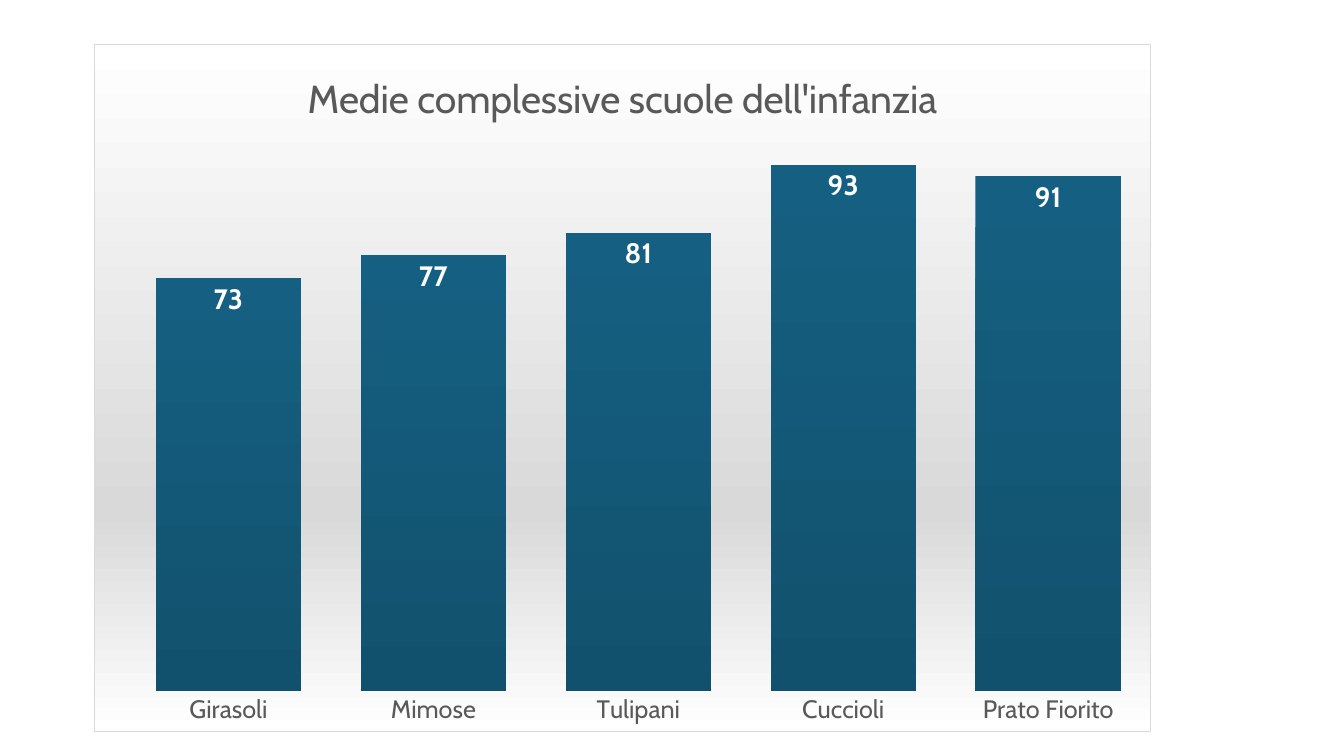
from lxml import etree
from pptx import Presentation
from pptx.chart.data import CategoryChartData
from pptx.dml.color import RGBColor
from pptx.enum.chart import XL_CHART_TYPE, XL_LABEL_POSITION, XL_TICK_MARK
from pptx.oxml import parse_xml
from pptx.oxml.ns import nsdecls, qn
from pptx.util import Pt

COLUMNS = XL_CHART_TYPE.COLUMN_CLUSTERED
INSIDE_END = XL_LABEL_POSITION.INSIDE_END
NO_TICKS = XL_TICK_MARK.NONE

FONT = "Cabin"
WHITE = RGBColor(0xFF, 0xFF, 0xFF)
SILVER = RGBColor(0xD9, 0xD9, 0xD9)
GREY = RGBColor(0x59, 0x59, 0x59)
BLUE = RGBColor(0x15, 0x60, 0x82)
DARK_BLUE = RGBColor(0x12, 0x51, 0x6D)

TITLE = "Medie complessive scuole dell'infanzia"
AVERAGES = {
    "Girasoli": 73,
    "Mimose": 77,
    "Tulipani": 81,
    "Cuccioli": 93,
    "Prato Fiorito": 91,
}
PLOT_LAYOUT = {"x": 0.03, "y": 0.117, "w": 0.97, "h": 0.824}


def set_font(font, size, color, bold=False):
    values = {"name": FONT, "size": Pt(size), "bold": bold}
    for name, value in values.items():
        setattr(font, name, value)
    font.color.rgb = color


def gradient_xml(stops):
    """Return a top-to-bottom gradient fill for (percent, colour) stops."""
    gs = "".join(
        f'<a:gs pos="{pos * 1000}"><a:srgbClr val="{color}"/></a:gs>'
        for pos, color in stops
    )
    return (f'<a:gradFill {nsdecls("a")}><a:gsLst>{gs}</a:gsLst>'
            '<a:lin ang="5400000" scaled="0"/></a:gradFill>')


def style_chart_area(chart):
    border = (f'<a:ln w="{Pt(0.75)}"><a:solidFill><a:srgbClr val="{SILVER}"/>'
              '</a:solidFill></a:ln>')
    fill = gradient_xml([(0, WHITE), (68, SILVER), (100, WHITE)])
    sp_pr = parse_xml(f'<c:spPr {nsdecls("c", "a")}>{fill}{border}</c:spPr>')
    chart.element.find(qn("c:chart")).addnext(sp_pr)


def place_plot(chart):
    plot_area = chart.element.find(".//" + qn("c:plotArea"))
    for old in plot_area.findall(qn("c:layout")):
        plot_area.remove(old)
    layout = etree.Element(qn("c:layout"))
    manual = etree.SubElement(layout, qn("c:manualLayout"))
    settings = {"layoutTarget": "inner", "xMode": "edge", "yMode": "edge"}
    for tag, value in {**settings, **PLOT_LAYOUT}.items():
        etree.SubElement(manual, qn(f"c:{tag}")).set("val", str(value))
    plot_area.insert(0, layout)


def style_title(chart):
    chart.has_title = True
    tf = chart.chart_title.text_frame
    tf.text = TITLE
    set_font(tf.paragraphs[0].runs[0].font, 28, GREY)


def style_axes(chart):
    axis = chart.category_axis
    axis.major_tick_mark = NO_TICKS
    axis.format.line.fill.background()
    set_font(axis.tick_labels.font, 18, GREY)

    values = {"minimum_scale": 0, "maximum_scale": 100,
              "has_major_gridlines": False, "visible": False}
    for name, value in values.items():
        setattr(chart.value_axis, name, value)


def style_columns(plot):
    plot.gap_width = 41
    plot.vary_by_categories = False
    series = plot.series[0]
    series.format.fill.background()
    sp_pr = series.format.fill._xPr
    fill = parse_xml(gradient_xml([(0, BLUE), (100, DARK_BLUE)]))
    sp_pr.replace(sp_pr.find(qn("a:noFill")), fill)

    labels = series.data_labels
    values = {"show_value": True, "position": INSIDE_END,
              "number_format": "0", "number_format_is_linked": False}
    for name, value in values.items():
        setattr(labels, name, value)
    set_font(labels.font, 20, WHITE, bold=True)


def add_averages_chart(slide):
    data = CategoryChartData(number_format="0")
    data.categories = list(AVERAGES)
    data.add_series("Series 1", list(AVERAGES.values()))
    chart = slide.shapes.add_chart(
        COLUMNS, Pt(67), Pt(31.7), Pt(755.3), Pt(491), data).chart
    chart.has_legend = False
    chart.font.name = FONT
    chart.font.size = Pt(10)
    style_chart_area(chart)
    style_title(chart)
    style_axes(chart)
    style_columns(chart.plots[0])
    place_plot(chart)


def main():
    prs = Presentation()
    prs.slide_width, prs.slide_height = Pt(960), Pt(540)
    slide = prs.slides.add_slide(prs.slide_layouts.get_by_name("Blank"))
    add_averages_chart(slide)
    prs.save("out.pptx")


if __name__ == "__main__":
    main()
